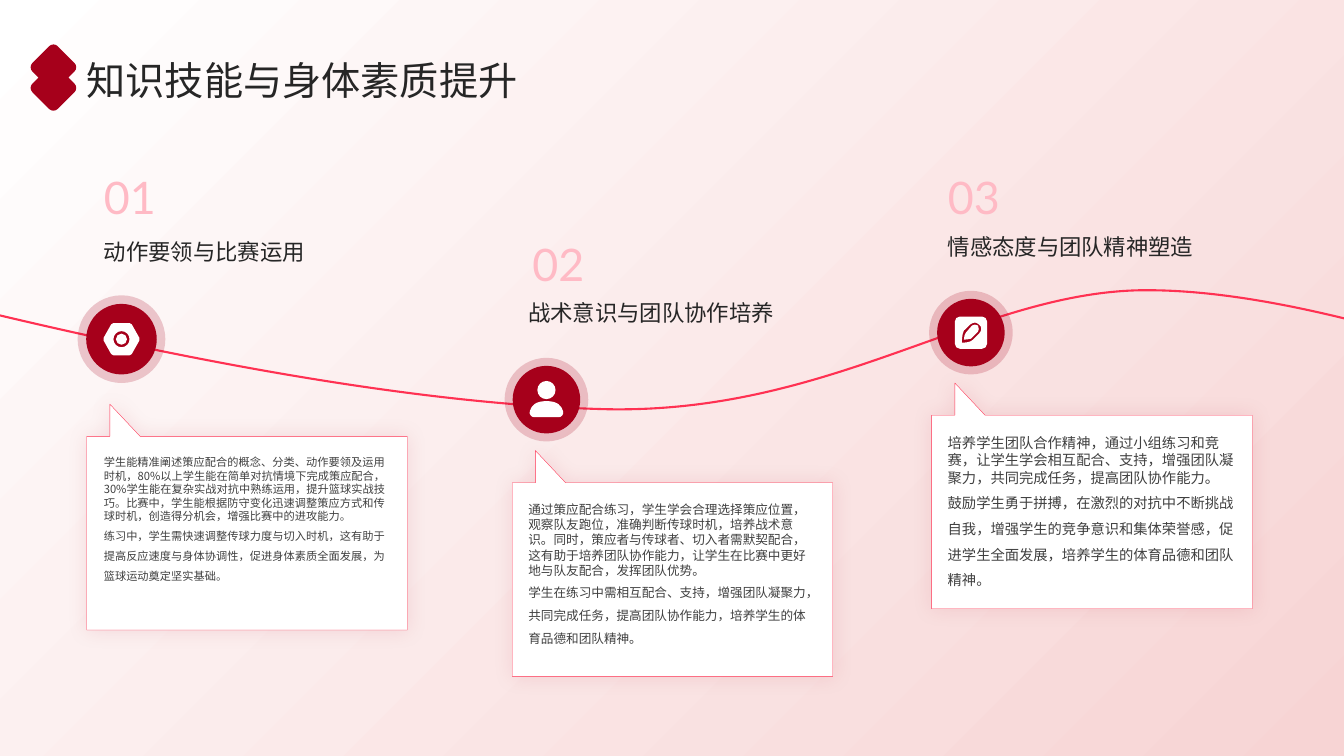
import math
from dataclasses import dataclass

from lxml import etree
from pptx import Presentation
from pptx import util as u
from pptx.dml.color import RGBColor
from pptx.enum import shapes, text
from pptx.oxml.ns import qn

COLUMNS, ROWS = 1333, 750
CJK, LATIN = "Noto Sans CJK SC", "Lato"
CRIMSON, ROSE, WHITE, INK = "A6001B", "FF3152", "FFFFFF", "262626"

deck = Presentation()
deck.slide_width, deck.slide_height = u.Inches(13.33), u.Inches(7.5)
page = deck.slides.add_slide(deck.slide_layouts[6])


@dataclass(frozen=True)
class Step:
    number: str
    number_at: tuple
    heading: str
    heading_at: tuple
    disc_at: tuple
    halo: int
    core: int
    icon: list
    card_at: tuple
    size: float
    paragraphs: tuple


def col(n: float) -> int:
    return round(deck.slide_width * n / COLUMNS)


def row(n: float) -> int:
    return round(deck.slide_height * n / ROWS)


def color(value: str) -> RGBColor:
    return RGBColor.from_string(value)


def circle(x: float, y: float, r: float) -> list:
    k = r * 0.55
    return [(x, y - r), (x + k, y - r, x + r, y - k, x + r, y), (x + r, y + k, x + k, y + r, x, y + r),
            (x - k, y + r, x - r, y + k, x - r, y), (x - r, y - k, x - k, y - r, x, y - r)]


def toward(start: tuple, end: tuple, distance: float) -> tuple:
    share = distance / math.dist(start, end)
    return tuple(a + (b - a) * share for a, b in zip(start, end))


def rounded(corners: list, radius: float, sharp: tuple = ()) -> list:
    segments = []
    for i, corner in enumerate(corners):
        before, after = corners[i - 1], corners[(i + 1) % len(corners)]
        if i in sharp:
            segments.append(corner)
            continue
        segments.append(toward(corner, before, radius))
        segments.append(toward(corner, before, radius * 0.45) + toward(corner, after, radius * 0.45)
                        + toward(corner, after, radius))
    return segments


def outline(contours: list, at: tuple = (0, 0), fill: str = "", line: str = "",
            width: float = 1, closed: bool = True):
    builder = None
    for contour in contours:
        points = [(col(at[0] + part[i]), row(at[1] + part[i + 1]))
                  for part in contour for i in range(0, len(part), 2)]
        if builder is None:
            builder = page.shapes.build_freeform(*points[0])
        else:
            builder.move_to(*points[0])
        builder.add_line_segments(points[1:], close=closed)
    shape = builder.convert_to_shape()
    lines = iter(list(shape.element.spPr.iter(qn("a:lnTo"))))
    for part in (part for contour in contours for part in contour[1:]):
        first = next(lines)
        if len(part) == 6:
            first.tag = qn("a:cubicBezTo")
            for _ in range(2):
                control = next(lines)
                first.append(control[0])
                control.getparent().remove(control)
    paint(shape, fill, line, width)
    return shape


def paint(shape, fill: str, line: str = "", width: float = 1) -> None:
    shape.shadow.inherit = False
    if fill:
        shape.fill.solid()
        shape.fill.fore_color.rgb = color(fill)
    else:
        shape.fill.background()
    if line:
        shape.line.color.rgb = color(line)
        shape.line.width = u.Pt(width)
    else:
        shape.line.fill.background()


def set_alpha(parent, percent: int) -> None:
    etree.SubElement(parent, qn("a:alpha")).set("val", str(percent * 1000))


def disc(at: tuple, size: int, alpha: int = 100) -> None:
    shape = page.shapes.add_shape(shapes.MSO_SHAPE.OVAL, col(at[0] - size / 2),
                                  row(at[1] - size / 2), col(size), row(size))
    paint(shape, CRIMSON)
    if alpha < 100:
        set_alpha(next(shape.element.spPr.iter(qn("a:srgbClr"))), alpha)


def glow(shape) -> None:
    effects = shape.element.spPr.find(qn("a:effectLst"))
    shadow = etree.SubElement(effects, qn("a:outerShdw"), blurRad=str(u.Pt(15)), dist="0",
                              dir="0", algn="ctr", rotWithShape="0")
    set_alpha(etree.SubElement(shadow, qn("a:srgbClr"), val=CRIMSON), 10)


def write(at: tuple, extent: tuple, paragraphs: tuple, size: float, tint: str, spacing: tuple,
          font: str = CJK, anchor=text.MSO_ANCHOR.TOP) -> None:
    box = page.shapes.add_textbox(col(at[0]), row(at[1]), col(extent[0]), row(extent[1]))
    frame = box.text_frame
    frame.word_wrap = True
    frame.vertical_anchor = anchor
    frame.margin_left = frame.margin_right = frame.margin_top = frame.margin_bottom = 0
    frame.text = "\n".join(paragraphs)
    for para, leading in zip(frame.paragraphs, spacing):
        para.line_spacing = leading
        para._p.get_or_add_pPr().set("hangingPunct", str(int(leading > 1)))
        for span in para.runs:
            span.font.size = u.Pt(size)
            span.font.name = font
            span.font.color.rgb = color(tint)
            etree.SubElement(span.font._element, qn("a:ea")).set("typeface", font)


def draw_step(step: Step) -> None:
    glow(outline([CARD], step.card_at, WHITE, ROSE, 0.25))
    write(step.heading_at, (333, 34), (step.heading,), 16, INK, (1.3,))
    disc(step.disc_at, step.halo, 20)
    disc(step.disc_at, step.core)
    outline(step.icon, step.disc_at, WHITE)
    write((step.heading_at[0], step.card_at[1] + 51), (286, 161), step.paragraphs, step.size,
          "404040", (1.0, 1.5))
    write(step.number_at, (95, 57), (step.number,), 32, "FFBAC5", (1.3,), LATIN,
          text.MSO_ANCHOR.BOTTOM)


CARD = [(23, 0), (53, 32), (318, 32), (318, 224), (0, 224), (0, 32), (23, 32)]
NUT = [circle(0, 0, 5.5), circle(0, 0, 8),
       rounded([(-18.5, 0), (-9.5, -16), (9.5, -16), (18.5, 0), (9.5, 16), (-9.5, 16)], 1.5)]
PERSON = [[(0, 1.5), (11, 1.5, 15, 6, 16.5, 11.5), (17.5, 14.5, 15, 17.5, 12, 17.5), (-12, 17.5),
           (-15, 17.5, -17.5, 14.5, -16.5, 11.5), (-15, 6, -11, 1.5, 0, 1.5)],
          circle(0, -9.5, 9)]
PENCIL = [[(4, -8), (5, -8, 6, -7, 7, -7), (8, -5, 8, -2, 7, -1), (0, 6), (0, 6, -4, 7, -7, 7),
           (-7, 4, -6, 1, -5, 0), (1, -7), (2, -7, 3, -8, 4, -8)],
          [(4, -10), (2, -10, 1, -9, -1, -8), (-7, -2), (-9, 1, -9, 10, -9, 10),
           (-9, 10, 0, 10, 2, 7), (8, 1), (11, -2, 11, -6, 8, -8), (7, -9, 5, -10, 4, -10)],
          rounded([(-16, -16), (16, -16), (16, 16), (-16, 16)], 5)]
MARK = [rounded([(-25, -25), (10.5, -25), (10.5, -10.5), (25, -10.5), (25, 25), (-10.5, 25),
                 (-10.5, 10.5), (-25, 10.5)], 6, sharp=(2, 6))]
WAVE = [(1582, 387), (1627, 395, 1648, 401, 1572, 384), (1497, 368, 1291, 285, 1129, 288),
        (968, 292, 825, 410, 603, 406), (382, 401, 84, 339, -200, 262)]

STEPS = [
    Step("01", (103, 165), "动作要领与比赛运用", (103, 228), (120.5, 336.5), 87, 70, NUT, (86, 401), 8,
         ("学生能精准阐述策应配合的概念、分类、动作要领及运用时机，80%以上学生能在简单对抗情境下完成策应配合，"
          "30%学生能在复杂实战对抗中熟练运用，提升篮球实战技巧。比赛中，学生能根据防守变化迅速调整策应方式和"
          "传球时机，创造得分机会，增强比赛中的进攻能力。",
          "练习中，学生需快速调整传球力度与切入时机，这有助于提高反应速度与身体协调性，促进身体素质全面发展，"
          "为篮球运动奠定坚实基础。")),
    Step("02", (528, 231), "战术意识与团队协作培养", (524, 289), (542, 396.5), 83, 67, PERSON, (508, 447), 9,
         ("通过策应配合练习，学生学会合理选择策应位置，观察队友跑位，准确判断传球时机，培养战术意识。同时，"
          "策应者与传球者、切入者需默契配合，这有助于培养团队协作能力，让学生在比赛中更好地与队友配合，"
          "发挥团队优势。",
          "学生在练习中需相互配合、支持，增强团队凝聚力，共同完成任务，提高团队协作能力，培养学生的体育品德和"
          "团队精神。")),
    Step("03", (940, 165), "情感态度与团队精神塑造", (940, 223), (963, 330), 83, 67, PENCIL, (924, 380), 10.2,
         ("培养学生团队合作精神，通过小组练习和竞赛，让学生学会相互配合、支持，增强团队凝聚力，共同完成任务，"
          "提高团队协作能力。",
          "鼓励学生勇于拼搏，在激烈的对抗中不断挑战自我，增强学生的竞争意识和集体荣誉感，促进学生全面发展，"
          "培养学生的体育品德和团队精神。")),
]


def main() -> None:
    backdrop = page.shapes.add_shape(shapes.MSO_SHAPE.RECTANGLE, 0, 0, col(COLUMNS), row(ROWS))
    paint(backdrop, WHITE)
    backdrop.fill.gradient()
    backdrop.fill.gradient_angle = 315
    for stop, position, tint in zip(backdrop.fill.gradient_stops, (0, 1), (WHITE, "F7D4D4")):
        stop.position = position
        stop.color.rgb = color(tint)
    outline([WAVE], line=ROSE, width=1.5, closed=False)
    for step in STEPS:
        draw_step(step)
    write((86, 51), (1167, 51), ("知识技能与身体素质提升",), 28, INK, (1.1,),
          anchor=text.MSO_ANCHOR.MIDDLE)
    outline(MARK, (53, 77), CRIMSON).rotation = 45
    deck.save("out.pptx")


if __name__ == "__main__":
    main()
